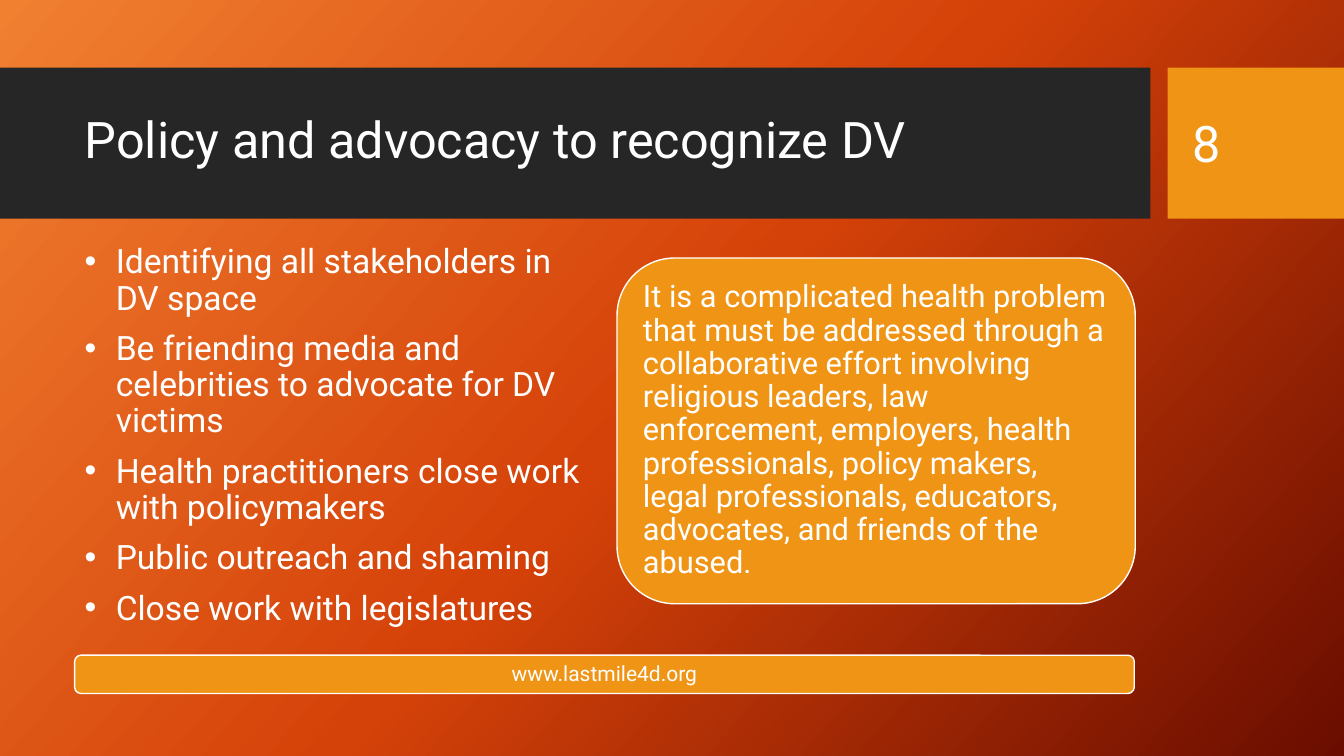
from copy import deepcopy
from dataclasses import dataclass

from pptx import Presentation
from pptx.dml.color import RGBColor
from pptx.enum.shapes import MSO_SHAPE
from pptx.enum.text import MSO_ANCHOR, PP_ALIGN
from pptx.oxml.ns import qn
from pptx.slide import Slide
from pptx.text.text import TextFrame
from pptx.util import Inches, Pt
from lxml import etree

RECTANGLE = MSO_SHAPE.RECTANGLE
ROUNDED = MSO_SHAPE.ROUNDED_RECTANGLE
TOP, MIDDLE = MSO_ANCHOR.TOP, MSO_ANCHOR.MIDDLE
LEFT, CENTER = PP_ALIGN.LEFT, PP_ALIGN.CENTER

WHITE = RGBColor(0xFF, 0xFF, 0xFF)
CHARCOAL = RGBColor(0x26, 0x26, 0x26)
AMBER = RGBColor(0xF0, 0x94, 0x15)
GRADIENT = (
    (0, RGBColor(0xF1, 0x80, 0x31)),
    (0.5, RGBColor(0xD5, 0x42, 0x09)),
    (1, RGBColor(0x6A, 0x0D, 0x00)),
)
GRADIENT_ANGLE = 360 - 42  # counter-clockwise

FONT = "Roboto"
LINE_SPACING = 0.9
BULLET_INDENT = Inches(0.31)

TITLE = "Policy and advocacy to recognize DV"
ACTIONS = (
    "Identifying all stakeholders in DV space",
    "Be friending media and celebrities to advocate for DV victims",
    "Health practitioners close work with policymakers",
    "Public outreach and shaming",
    "Close work with legislatures",
)
STATEMENT = (
    "It is a complicated health problem that must be addressed through a "
    "collaborative effort involving religious leaders, law enforcement, "
    "employers, health professionals, policy makers, legal professionals, "
    "educators, advocates, and friends of the abused."
)


@dataclass(frozen=True)
class Box:
    left: float
    top: float
    width: float
    height: float

    def lengths(self) -> tuple[int, int, int, int]:
        return (Inches(self.left), Inches(self.top),
                Inches(self.width), Inches(self.height))


@dataclass(frozen=True)
class Panel:
    box: Box
    fill: RGBColor
    preset: MSO_SHAPE = RECTANGLE
    text: str = ""
    size: float = 18
    align: PP_ALIGN = LEFT
    inset: float = 0.1


PANELS = (
    Panel(Box(0, 0.67, 11.41, 1.5), CHARCOAL),
    Panel(Box(11.58, 0.67, 1.75, 1.5), AMBER),
    Panel(Box(0.74, 6.5, 10.51, 0.38), AMBER, ROUNDED,
          "www.lastmile4d.org", 15, CENTER, 0.06),
    Panel(Box(6.12, 2.56, 5.14, 3.43), AMBER, ROUNDED,
          STATEMENT, 22, LEFT, 0.09),
)
TITLE_BOX = Box(0.74, 0.82, 10.51, 1.18)
ACTIONS_BOX = Box(0.74, 2.38, 5.14, 3.87)
NUMBER_BOX = Box(11.73, 0.82, 1.26, 1.19)


def paint_background(slide: Slide) -> None:
    fill = slide.background.fill
    fill.gradient()
    fill.gradient_angle = GRADIENT_ANGLE
    stop_list = fill._fill._gradFill.find(qn("a:gsLst"))
    stop_list.insert(1, deepcopy(stop_list[0]))
    for stop, (position, color) in zip(fill.gradient_stops, GRADIENT):
        stop.position = position
        stop.color.rgb = color


def write_text(frame: TextFrame, text: str, size: float,
               align: PP_ALIGN = LEFT, anchor: MSO_ANCHOR = MIDDLE) -> None:
    frame.text = text
    frame.word_wrap = True
    frame.vertical_anchor = anchor
    for paragraph in frame.paragraphs:
        paragraph.alignment = align
        paragraph.line_spacing = LINE_SPACING
        for run in paragraph.runs:
            run.font.name = FONT
            run.font.size = Pt(size)
            run.font.color.rgb = WHITE


def add_bullets(frame: TextFrame) -> None:
    for index, paragraph in enumerate(frame.paragraphs):
        paragraph.space_before = Pt(10 if index else 0)
        properties = paragraph._p.get_or_add_pPr()
        properties.set("marL", str(BULLET_INDENT))
        properties.set("indent", str(-BULLET_INDENT))
        bullet_font = etree.SubElement(properties, qn("a:buFont"))
        bullet_font.set("typeface", "Arial")
        bullet = etree.SubElement(properties, qn("a:buChar"))
        bullet.set("char", "•")


def add_panel(slide: Slide, panel: Panel) -> None:
    shape = slide.shapes.add_shape(panel.preset, *panel.box.lengths())
    shape.shadow.inherit = False
    shape.fill.solid()
    shape.fill.fore_color.rgb = panel.fill
    if panel.preset == ROUNDED:
        shape.line.color.rgb = WHITE
        shape.line.width = Pt(1)
    else:
        shape.line.fill.background()
    if panel.text:
        frame = shape.text_frame
        frame.margin_left = frame.margin_right = Inches(panel.inset)
        frame.margin_top = frame.margin_bottom = Inches(panel.inset)
        write_text(frame, panel.text, panel.size, panel.align)


def place_title(slide: Slide) -> None:
    """Format the title and bring it in front of its band."""
    title = slide.shapes.title
    title.left, title.top, title.width, title.height = TITLE_BOX.lengths()
    write_text(title.text_frame, TITLE, 36)
    title.element.getparent().append(title.element)


def main() -> None:
    presentation = Presentation()
    presentation.slide_width = Inches(13.33)
    presentation.slide_height = Inches(7.5)
    title_only = presentation.slide_layouts[5]
    slide = presentation.slides.add_slide(title_only)

    paint_background(slide)
    for panel in PANELS:
        add_panel(slide, panel)
    place_title(slide)

    actions = slide.shapes.add_textbox(*ACTIONS_BOX.lengths()).text_frame
    write_text(actions, "\n".join(ACTIONS), 24, anchor=TOP)
    add_bullets(actions)

    number = slide.shapes.add_textbox(*NUMBER_BOX.lengths()).text_frame
    write_text(number, "8", 36)
    number.paragraphs[0].line_spacing = 1.0

    presentation.save("out.pptx")


if __name__ == "__main__":
    main()
